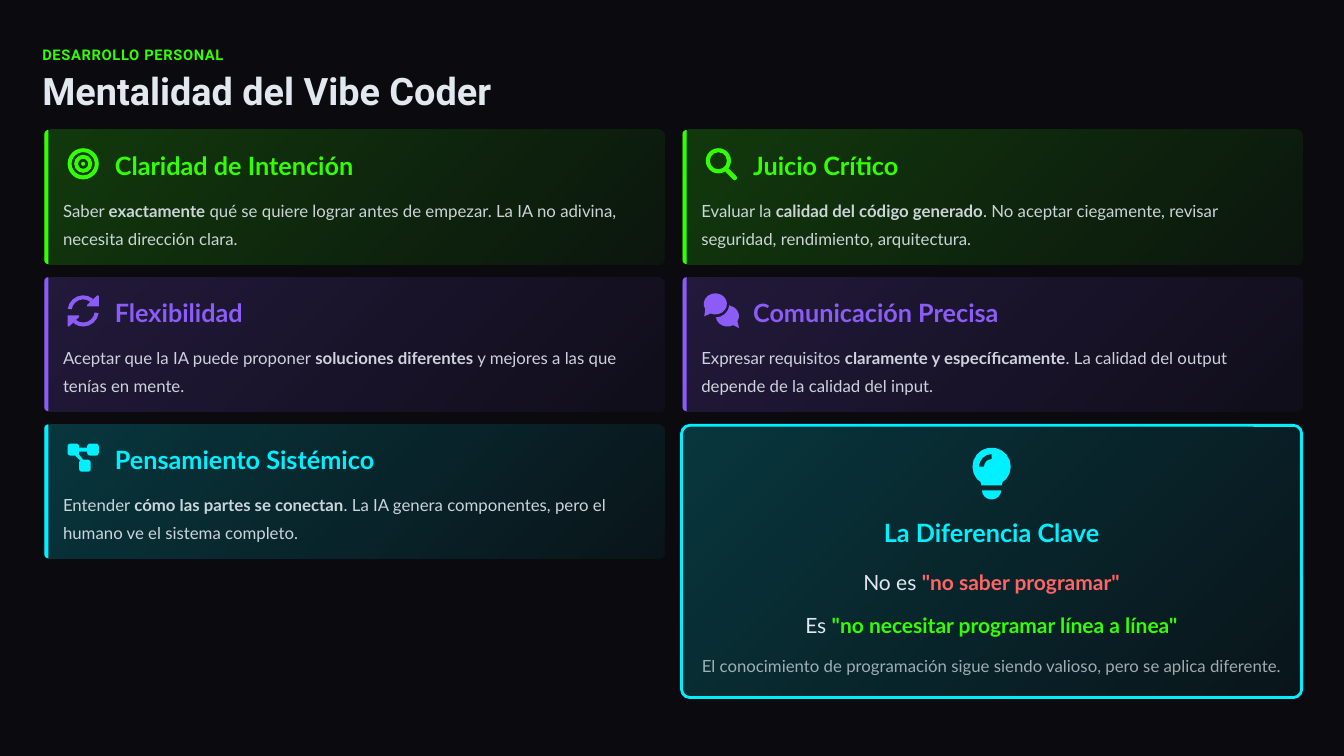
from math import cos, radians, sin

from lxml.etree import SubElement
from pptx import Presentation
from pptx.dml.color import RGBColor
from pptx.enum.shapes import MSO_SHAPE
from pptx.enum.text import MSO_ANCHOR, PP_ALIGN
from pptx.oxml.ns import qn
from pptx.util import Inches, Pt

COLORS = {"bg": "0A0A0F", "text": "E2E8F0", "green": "33FF00",
          "purple": "8B5CF6", "cyan": "00F0FF", "red": "FF6467"}


def rgb(name):
    return RGBColor.from_string(COLORS[name])


def set_alpha(element, *percents):
    """Set the opacity of each colour in the element, in order."""
    for color, percent in zip(element.iter(qn("a:srgbClr")), percents):
        SubElement(color, qn("a:alpha")).set("val", str(percent * 1000))


def arc(cx, cy, rx, start, end, ry=None):
    """Points along an arc; angles in degrees, clockwise from the right."""
    ry = ry or rx
    steps = max(2, round(abs(end - start) / 20))
    angles = [radians(start + (end - start) * i / steps) for i in range(steps + 1)]
    return [(cx + rx * cos(a), cy + ry * sin(a)) for a in angles]


class Deck:
    def __init__(self):
        self.prs = Presentation()
        self.prs.slide_width, self.prs.slide_height = Inches(13.33), Inches(7.5)
        self.s = self.prs.slides.add_slide(self.prs.slide_layouts[6])
        self.s.background.fill.solid()
        self.s.background.fill.fore_color.rgb = rgb("bg")

    def paint(self, sp, color, fade=False):
        """Fill solid, or fade diagonally from 20% to 5% opacity."""
        sp.shadow.inherit = False
        sp.line.fill.background()
        if not fade:
            sp.fill.solid()
            sp.fill.fore_color.rgb = rgb(color)
            return
        sp.fill.gradient()
        sp.fill.gradient_angle = 315
        for stop in sp.fill.gradient_stops:
            stop.color.rgb = rgb(color)
        set_alpha(sp.element, 20, 5)

    def shape(self, kind, x, y, w, h, color, adjust=None, fade=False):
        sp = self.s.shapes.add_shape(kind, Inches(x), Inches(y), Inches(w), Inches(h))
        if adjust is not None:
            sp.adjustments[0] = adjust
        self.paint(sp, color, fade)
        return sp

    def outline(self, x, y, color, *contours):
        """Draw closed contours as one shape, offset to x, y."""
        parts = [[(Inches(x + px), Inches(y + py)) for px, py in c] for c in contours]
        builder = self.s.shapes.build_freeform(*parts[0][0])
        for i, part in enumerate(parts):
            if i:
                builder.move_to(*part[0])
            builder.add_line_segments(part[1:], close=True)
        self.paint(builder.convert_to_shape(), color)

    def ring(self, x, y, r, thickness, color):
        self.shape(MSO_SHAPE.DONUT, x - r, y - r, 2 * r, 2 * r, color, thickness / (2 * r))

    def target_icon(self, x, y, color):
        self.ring(x, y, 0.155, 0.04, color)
        self.ring(x, y, 0.09, 0.04, color)
        self.shape(MSO_SHAPE.OVAL, x - 0.02, y - 0.02, 0.04, 0.04, color)

    def search_icon(self, x, y, color):
        self.ring(x - 0.03, y - 0.03, 0.125, 0.04, color)
        handle = self.shape(MSO_SHAPE.ROUNDED_RECTANGLE, x + 0.02, y + 0.08,
                            0.15, 0.045, color, 0.5)
        handle.rotation = 45

    def sync_icon(self, x, y, color):
        band = arc(0, 0, 0.155, 188, 308) + arc(0, 0, 0.115, 308, 188)
        head = [(0.155, -0.15), (0.155, -0.045), (0.04, -0.045), (0.04, -0.06),
                (0.14, -0.155)]
        half = [band, head]
        self.outline(x, y, color, *half, *[[(-px, -py) for px, py in c] for c in half])

    def chat_icon(self, x, y, color):
        front = arc(-0.06, -0.07, 0.115, 150, 475, 0.105) + [(-0.17, 0.055)]
        back = (arc(0.06, 0.05, 0.115, -78, 30, 0.105) + [(0.175, 0.17)]
                + arc(0.06, 0.05, 0.115, 60, 172, 0.105)
                + arc(-0.06, -0.07, 0.14, 90, 5, 0.135))
        self.outline(x, y, color, front, back)

    def nodes_icon(self, x, y, color):
        for dx, dy in ((-0.155, -0.145), (0.04, -0.145), (-0.04, 0.015)):
            self.shape(MSO_SHAPE.ROUNDED_RECTANGLE, x + dx, y + dy, 0.115, 0.12, color, 0.25)
        bar = [(-0.04, -0.105), (0.04, -0.105), (0.04, -0.065), (-0.04, -0.065)]
        link = [(-0.08, -0.025), (-0.045, -0.04), (0, 0.015), (-0.03, 0.025)]
        self.outline(x, y, color, bar, link)

    def bulb_icon(self, x, y, color):
        glass = arc(0, 0, 0.19, 139, 401) + [(0.11, 0.15), (0.1, 0.185),
                                             (-0.1, 0.185), (-0.11, 0.15)]
        base = arc(0, 0.235, 0.095, 0, 180, 0.09)
        shine = arc(0, 0, 0.125, 180, 270) + arc(0, 0, 0.075, 270, 180)
        self.outline(x, y, color, glass, base, shine)

    def text(self, x, y, w, h, runs, size, spacing, font="Lato", align=PP_ALIGN.LEFT,
             alpha=None, tracking=None):
        """Runs are (text, colour, bold)."""
        box = self.s.shapes.add_textbox(Inches(x), Inches(y), Inches(w), Inches(h))
        tf = box.text_frame
        tf.word_wrap = True
        tf.vertical_anchor = MSO_ANCHOR.MIDDLE
        tf.margin_left = tf.margin_right = tf.margin_top = tf.margin_bottom = 0
        p = tf.paragraphs[0]
        p.alignment, p.line_spacing = align, spacing
        for words, color, bold in runs:
            r = p.add_run()
            r.text = words
            r.font.name, r.font.size, r.font.bold = font, Pt(size), bold
            r.font.color.rgb = rgb(color)
            if alpha:
                set_alpha(r._r, alpha)
            if tracking:
                r._r.get_or_add_rPr().set("spc", str(int(tracking * 100)))

    def card(self, x, y, color, icon, title, before, strong, after):
        self.shape(MSO_SHAPE.ROUNDED_RECTANGLE, x, y, 6.15, 1.33, color, 0.05, fade=True)
        edge = arc(0.04, 0.04, 0.04, 270, 180) + arc(0.04, 1.29, 0.04, 180, 90)
        self.outline(x, y, color, edge)
        icon(x + 0.385, y + 0.335, color)
        self.text(x + 0.7, y + 0.17, 5, 0.33, [(title, color, True)], 18, 1.1)
        self.text(x + 0.185, y + 0.63, 5.88, 0.54,
                  [(before, "text", False), (strong, "text", True), (after, "text", False)],
                  12, 1.4, alpha=90)

    def key_box(self, x, y, w, h, color):
        sp = self.shape(MSO_SHAPE.ROUNDED_RECTANGLE, x, y, w, h, color, 0.03, fade=True)
        sp.line.color.rgb = rgb(color)
        sp.line.width = Pt(2)
        self.bulb_icon(x + w / 2, y + 0.41, color)
        lines = [
            (0.88, 0.33, 18, 1.1, None, [("La Diferencia Clave", color, True)]),
            (1.34, 0.34, 15, 1.4, None,
             [("No es ", "text", False), ('"no saber programar"', "red", True)]),
            (1.76, 0.34, 15, 1.4, None,
             [("Es ", "text", False),
              ('"no necesitar programar línea a línea"', "green", True)]),
            (2.23, 0.25, 12, 1.3, 70,
             [("El conocimiento de programación sigue siendo valioso, "
               "pero se aplica diferente.", "text", False)]),
        ]
        for top, height, size, spacing, alpha, runs in lines:
            self.text(x + 0.16, y + top, w - 0.32, height, runs, size, spacing,
                      align=PP_ALIGN.CENTER, alpha=alpha)


def main():
    deck = Deck()
    deck.text(0.42, 0.42, 12.57, 0.21, [("DESARROLLO PERSONAL", "green", True)],
              10.5, 1.2, "Roboto", tracking=0.5)
    deck.text(0.42, 0.71, 12.69, 0.42, [("Mentalidad del Vibe Coder", "text", True)],
              27, 0.9, "Roboto")
    cards = [
        ("green", deck.target_icon, "Claridad de Intención", "Saber ", "exactamente",
         " qué se quiere lograr antes de empezar. La IA no adivina, "
         "necesita dirección clara."),
        ("green", deck.search_icon, "Juicio Crítico", "Evaluar la ",
         "calidad del código generado",
         ". No aceptar ciegamente, revisar seguridad, rendimiento, arquitectura."),
        ("purple", deck.sync_icon, "Flexibilidad", "Aceptar que la IA puede proponer ",
         "soluciones diferentes", " y mejores a las que tenías en mente."),
        ("purple", deck.chat_icon, "Comunicación Precisa", "Expresar requisitos ",
         "claramente y específicamente",
         ". La calidad del output depende de la calidad del input."),
        ("cyan", deck.nodes_icon, "Pensamiento Sistémico", "Entender ",
         "cómo las partes se conectan",
         ". La IA genera componentes, pero el humano ve el sistema completo."),
    ]
    for i, card in enumerate(cards):
        row, col = divmod(i, 2)
        deck.card(0.44 + col * 6.33, 1.29 + row * 1.46, *card)
    deck.key_box(6.76, 4.22, 6.15, 2.7, "cyan")
    deck.prs.save("out.pptx")


if __name__ == "__main__":
    main()
